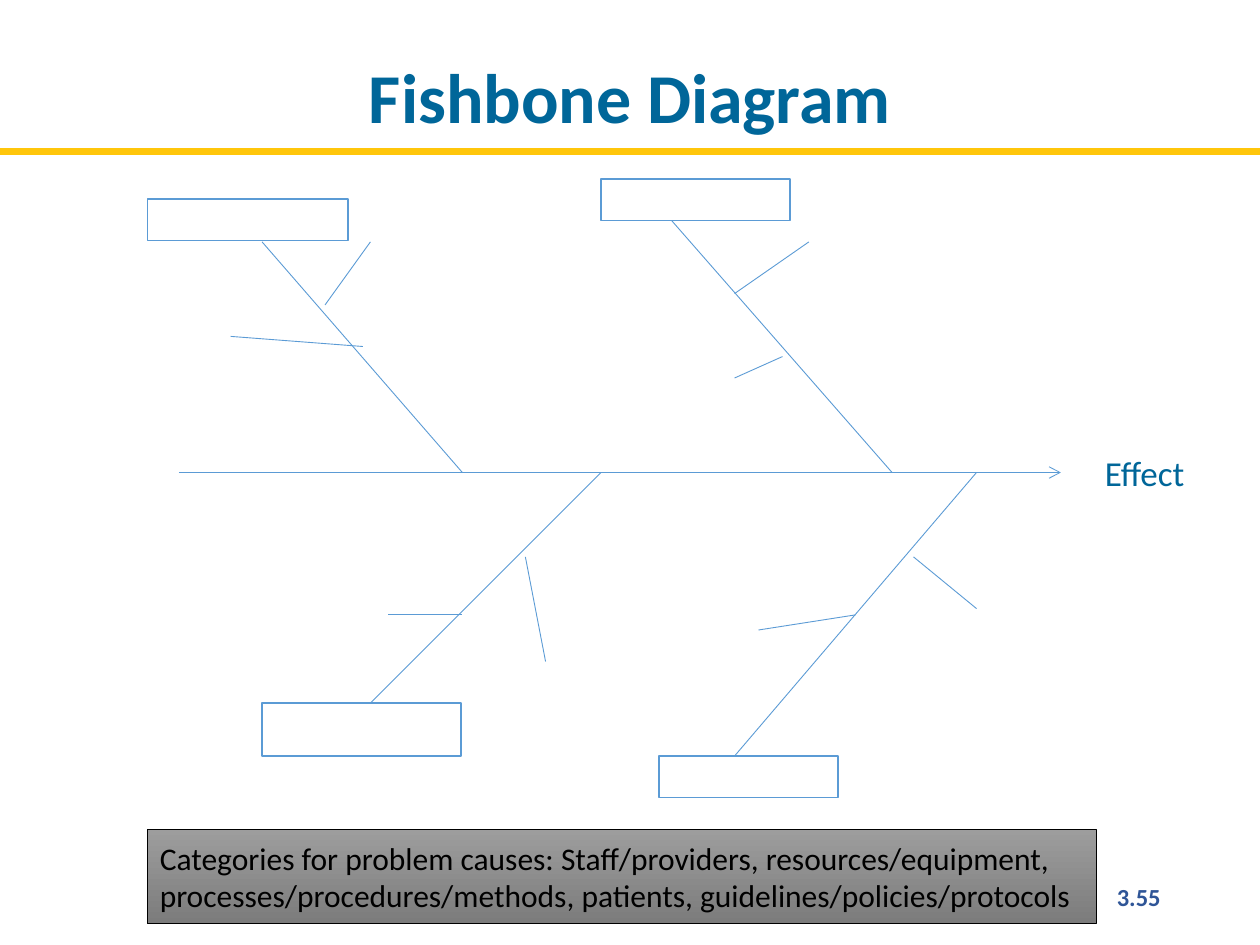
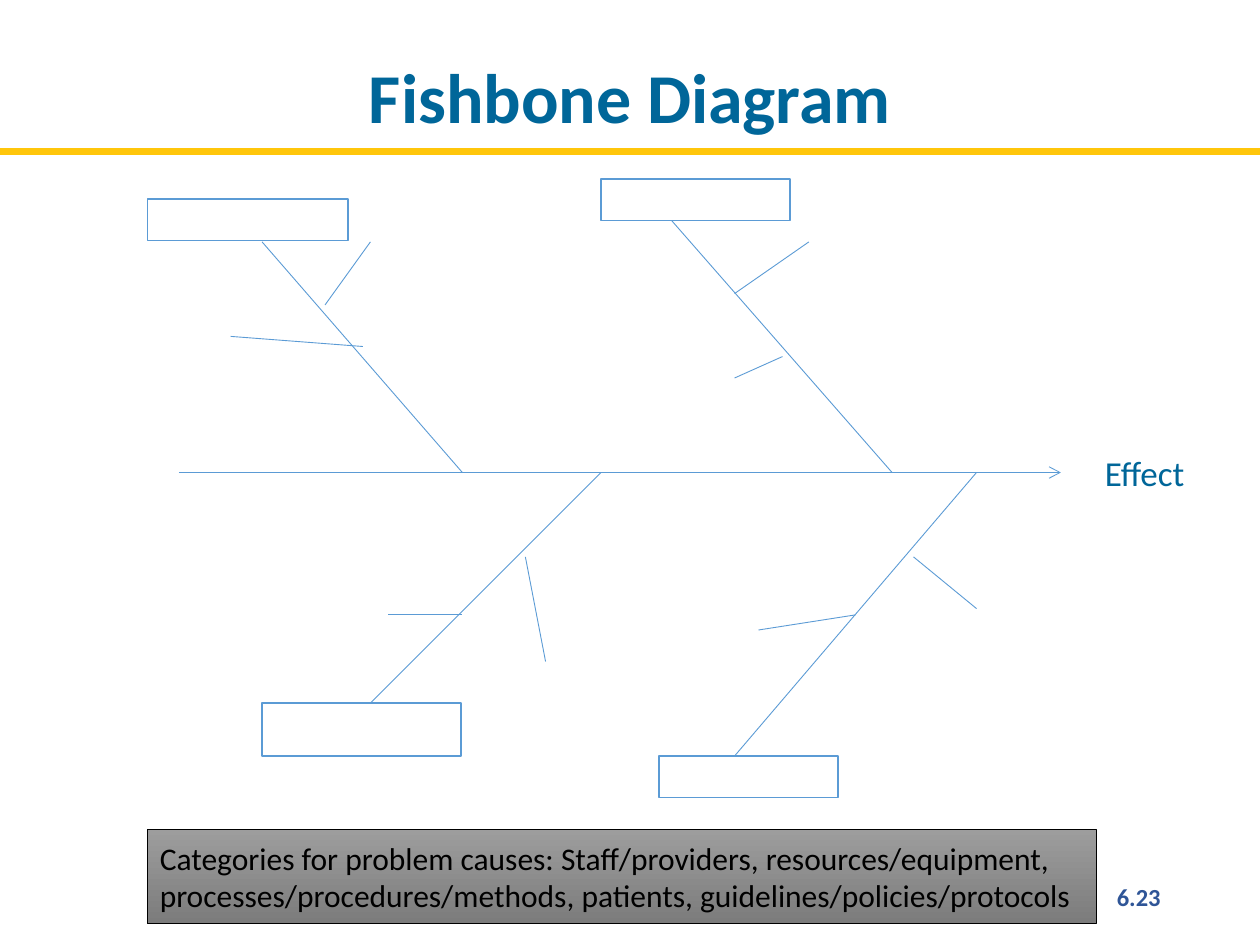
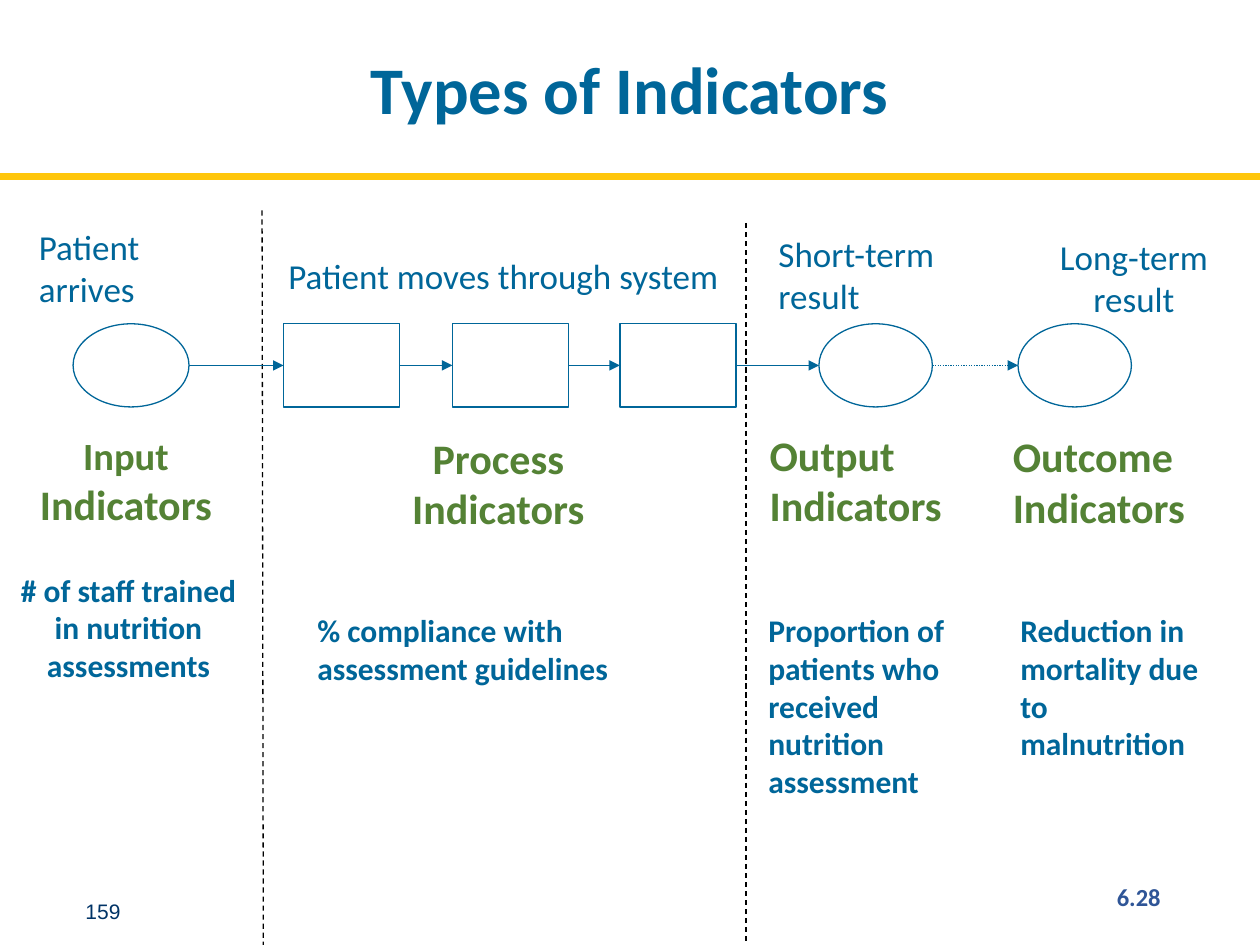
from typing import NamedTuple, Optional

import pptx
import pptx.dml.color
import pptx.enum.dml
import pptx.enum.shapes
import pptx.enum.text
import pptx.oxml.ns
import pptx.util
from lxml import etree

ALIGN = pptx.enum.text.PP_ALIGN
ANCHOR = pptx.enum.text.MSO_ANCHOR
DASH = pptx.enum.dml.MSO_LINE
SHAPE = pptx.enum.shapes.MSO_SHAPE

EMU_PER_PX = 9144  # 100 px to the inch
SLIDE_W, SLIDE_H = 1000, 750
FONT = "Calibri"
COLORS = {
    "blue": "006699",
    "bone": "5B9BD5",
    "gold": "FFC60B",
    "green": "548235",
    "page": "2F5597",
    "navy": "003366",
    "black": "000000",
    "white": "FFFFFF",
    "grey_top": "9D9D9D",
    "grey_bottom": "7C7C7C",
}


class Box(NamedTuple):
    x: int
    y: int
    w: int
    h: int


class Line(NamedTuple):
    x1: int
    y1: int
    x2: int
    y2: int


class Style(NamedTuple):
    size: int
    color: str = "blue"
    bold: bool = False
    align: ALIGN = ALIGN.LEFT
    font: str = FONT


class Label(NamedTuple):
    text: str
    box: Box
    style: Style


class Node(NamedTuple):
    kind: SHAPE
    x: int
    w: int


# Text styles
STAGE = Style(20)
STAGE_CENTERED = Style(20, align=ALIGN.CENTER)
INDICATOR = Style(24, "green", True)
INDICATOR_CENTERED = Style(24, "green", True, ALIGN.CENTER)
EXAMPLE = Style(18, bold=True)
EXAMPLE_CENTERED = Style(18, bold=True, align=ALIGN.CENTER)
PAGE = Style(14, "page", True, ALIGN.RIGHT)

# Fishbone parts
SPINE = Line(142, 375, 842, 375)
BONES = [
    Line(208, 192, 367, 375),
    Line(294, 558, 477, 375),
    Line(533, 175, 708, 375),
    Line(775, 375, 583, 600),
]
TWIGS = [
    Line(288, 275, 183, 267),
    Line(294, 192, 258, 242),
    Line(583, 300, 621, 283),
    Line(642, 192, 583, 233),
    Line(433, 525, 417, 442),
    Line(308, 488, 367, 488),
    Line(775, 483, 725, 442),
    Line(602, 500, 679, 488),
]
CAUSE_BOXES = [
    Box(117, 158, 159, 33),
    Box(477, 142, 150, 33),
    Box(208, 558, 158, 42),
    Box(523, 600, 142, 33),
]
CATEGORIES = (
    "Categories for problem causes: Staff/providers, resources/equipment, "
    "processes/procedures/methods, patients, guidelines/policies/protocols"
)

# Indicator parts
NODE_Y, NODE_H = 257, 66
NODES = [
    Node(SHAPE.OVAL, 58, 92),
    *[Node(SHAPE.FLOWCHART_PROCESS, 225 + round(i * 133.5), 92) for i in range(3)],
    Node(SHAPE.OVAL, 650, 90),
    Node(SHAPE.OVAL, 808, 90),
]
DIVIDERS = [Line(592, 177, 592, 750), Line(208, 167, 209, 750)]
LABELS = [
    Label("Patient moves through system", Box(133, 197, 533, 43), STAGE_CENTERED),
    Label("Patient arrives", Box(21, 174, 146, 77), STAGE),
    Label("Short-term result", Box(608, 180, 192, 77), STAGE),
    Label("Long-term result", Box(800, 182, 200, 77), STAGE_CENTERED),
    Label("Process Indicators", Box(283, 338, 225, 91), INDICATOR_CENTERED),
    Label("Output\nIndicators", Box(601, 336, 190, 91), INDICATOR),
    Label("Outcome\nIndicators", Box(794, 337, 206, 91), INDICATOR),
    Label("# of staff trained in nutrition assessments",
          Box(2, 448, 200, 101), EXAMPLE_CENTERED),
    Label("% compliance with assessment guidelines", Box(242, 480, 317, 116), EXAMPLE),
    Label("Proportion of patients who received nutrition assessment",
          Box(600, 480, 193, 162), EXAMPLE),
    Label("Reduction in mortality due to malnutrition", Box(800, 480, 177, 131), EXAMPLE),
    Label("159", Box(58, 708, 208, 25), Style(12, "navy", font="Arial")),
]


def px(n: int) -> pptx.util.Emu:
    return pptx.util.Emu(n * EMU_PER_PX)


def place(box: Box) -> list:
    return [px(n) for n in box]


def rgb(name: str) -> pptx.dml.color.RGBColor:
    return pptx.dml.color.RGBColor.from_string(COLORS[name])


def format_paragraph(p, style: Style) -> None:
    p.alignment = style.align
    p.font.name = style.font
    p.font.size = pptx.util.Pt(style.size)
    p.font.bold = style.bold
    p.font.color.rgb = rgb(style.color)


def write(tf, text: str, style: Style):
    tf.word_wrap = True
    p = tf.paragraphs[0]
    p.text = text
    format_paragraph(p, style)
    return p


def add_label(s, label: Label):
    sp = s.shapes.add_textbox(*place(label.box))
    return write(sp.text_frame, label.text, label.style)


def add_shape(s, kind: SHAPE, box: Box, fill: Optional[str] = None,
              line: Optional[str] = None, width: float = 1):
    sp = s.shapes.add_shape(kind, *place(box))
    sp.shadow.inherit = False
    if fill:
        sp.fill.solid()
        sp.fill.fore_color.rgb = rgb(fill)
    else:
        sp.fill.background()
    if line:
        sp.line.color.rgb = rgb(line)
        sp.line.width = pptx.util.Pt(width)
    else:
        sp.line.fill.background()
    return sp


def add_line(s, line: Line, color: str, width: float,
             dash: Optional[DASH] = None, head: Optional[str] = None):
    c = s.shapes.add_connector(pptx.enum.shapes.MSO_CONNECTOR.STRAIGHT,
                               *[px(n) for n in line])
    c.line.color.rgb = rgb(color)
    c.line.width = pptx.util.Pt(width)
    if dash:
        c.line.dash_style = dash
    if head:
        ln = c.line._get_or_add_ln()
        etree.SubElement(ln, pptx.oxml.ns.qn("a:tailEnd"), type=head)
    etree.SubElement(c._element.spPr, pptx.oxml.ns.qn("a:effectLst"))
    return c


def add_slide(prs, title: str, box: Box, size: int, band_y: int, page: str):
    """Start a slide with the shared title, gold band and page number."""
    s = prs.slides.add_slide(prs.slide_layouts[5])
    sp = s.shapes.title
    sp.left, sp.top, sp.width, sp.height = place(box)
    tf = sp.text_frame
    tf.auto_size = pptx.enum.text.MSO_AUTO_SIZE.NONE
    tf.vertical_anchor = ANCHOR.MIDDLE
    tf.margin_left = tf.margin_right = tf.margin_top = px(20)
    tf.margin_bottom = px(5)
    p = write(tf, title, Style(size, bold=True, align=ALIGN.CENTER))
    p.line_spacing = 0.9
    add_line(s, Line(0, band_y, SLIDE_W, band_y), "gold", 4)
    add_label(s, Label(page, Box(706, 695, 225, 40), PAGE))
    return s


def add_fishbone(prs, page: str) -> None:
    s = add_slide(prs, "Fishbone Diagram", Box(0, 0, SLIDE_W, 145), 40, 120, page)
    add_line(s, SPINE, "bone", 0.5, head="arrow")
    for line in BONES + TWIGS:
        add_line(s, line, "bone", 0.5)

    effect = add_shape(s, SHAPE.RECTANGLE, Box(842, 350, 133, 50), "white")
    write(effect.text_frame, "Effect", STAGE_CENTERED)

    # Shaded list of categories
    sp = add_shape(s, SHAPE.RECTANGLE, Box(117, 658, 753, 75), line="black", width=0.5)
    sp.fill.gradient()
    sp.fill.gradient_angle = 270
    for stop, color in zip(sp.fill.gradient_stops, ("grey_top", "grey_bottom")):
        stop.color.rgb = rgb(color)
    write(sp.text_frame, CATEGORIES, Style(18, "black"))

    for box in CAUSE_BOXES:
        add_shape(s, SHAPE.RECTANGLE, box, "white", "bone")


def add_indicators(prs, page: str) -> None:
    s = add_slide(prs, "Types of Indicators", Box(50, 16, 900, 101), 38, 140, page)
    for line in DIVIDERS:
        add_line(s, line, "black", 0.75, DASH.DASH)

    # Patient flow, joined left to right
    shapes = [add_shape(s, n.kind, Box(n.x, NODE_Y, n.w, NODE_H), line="blue", width=0.75)
              for n in NODES]
    mid = NODE_Y + NODE_H // 2
    for i, (a, b) in enumerate(zip(NODES, NODES[1:])):
        dash = DASH.ROUND_DOT if i == len(NODES) - 2 else None
        c = add_line(s, Line(a.x + a.w, mid, b.x, mid), "blue", 0.75, dash, "triangle")
        if a.kind == SHAPE.FLOWCHART_PROCESS:
            c.begin_connect(shapes[i], 3)
        if b.kind == SHAPE.FLOWCHART_PROCESS:
            c.end_connect(shapes[i + 1], 1)

    for label in LABELS:
        add_label(s, label)

    # Input heading mixes two sizes
    p = add_label(s, Label("", Box(0, 338, 200, 88), INDICATOR_CENTERED))
    for text, size in (("Input ", 22), ("Indicators", 24)):
        r = p.add_run()
        r.text = text
        r.font.size = pptx.util.Pt(size)


def main() -> None:
    prs = pptx.Presentation()
    prs.slide_width, prs.slide_height = px(SLIDE_W), px(SLIDE_H)
    add_fishbone(prs, "3.55")
    add_fishbone(prs, "6.23")
    add_indicators(prs, "6.28")
    prs.save("out.pptx")


if __name__ == "__main__":
    main()
